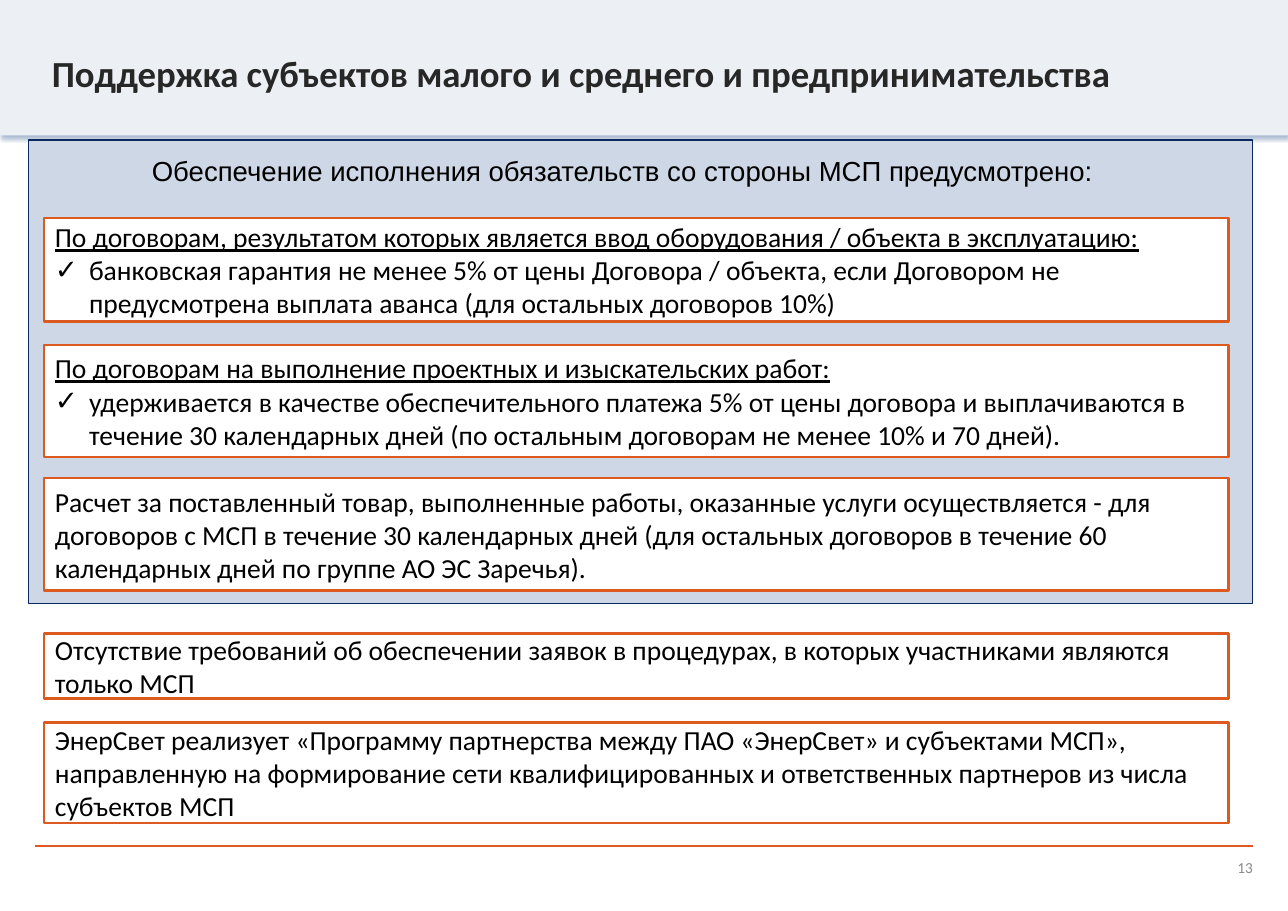
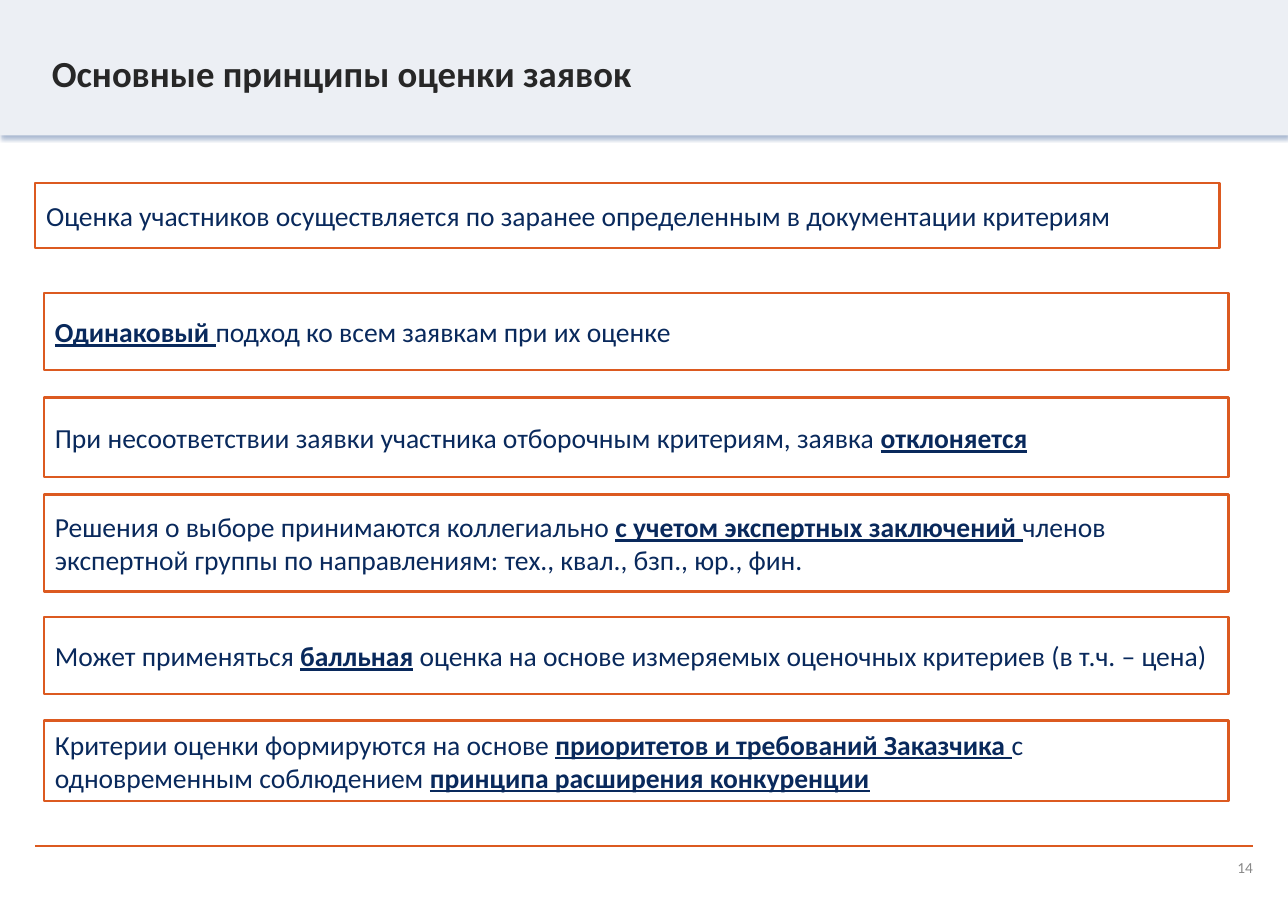
"""Build two slides on support for small businesses and on bid evaluation."""
from lxml.etree import SubElement
from pptx import Presentation
from pptx.dml.color import RGBColor
from pptx.enum.shapes import MSO_CONNECTOR, MSO_SHAPE
from pptx.enum.text import MSO_ANCHOR, PP_ALIGN
from pptx.oxml.ns import qn
from pptx.util import Inches, Pt

THEME = {
    "colours": {"accent": "DC5A20", "band": "ECEFF4", "shadow": "0C377B", "panel": "CED7E5",
                "navy": "09295C", "title": "272727", "number": "898989", "black": "000000",
                "white": "FFFFFF"},
    "title": {"name": "Calibri", "size": Pt(24), "bold": True},
    "body": {"name": "Calibri", "size": Pt(18)},
    "heading": {"name": "Arial", "size": Pt(18)},
    "number": {"name": "Calibri", "size": Pt(10)},
}
EMPHASIS = {
    "plain": {"bold": False, "underline": False},
    "under": {"bold": False, "underline": True},
    "strong": {"bold": True, "underline": True},
}
PAGE_WIDTH, PAGE_HEIGHT = 11.69, 8.27
CARD_LEFT, CARD_WIDTH = 0.4, 10.75
BULLET_INDENT = 0.31
PANEL = (0.26, 1.27, 11.11, 4.21)
HEADING = (1.28, 1.35, 9.35, 0.4)

SLIDES = [
    {
        "title": "Поддержка субъектов малого и среднего и предпринимательства",
        "number": "13",
        "heading": "Обеспечение исполнения обязательств со стороны МСП предусмотрено:",
        "colour": "black",
        "cards": [
            {"top": 1.98, "height": 0.94, "text": [
                [("По договорам, результатом которых является ввод оборудования / объекта "
                  "в эксплуатацию:", "under")]],
             "bullet": "банковская гарантия не менее 5% от цены Договора / объекта, если "
                       "Договором не предусмотрена выплата аванса (для остальных договоров 10%)"},
            {"top": 3.13, "height": 1.02, "text": [
                [("По договорам на выполнение проектных и изыскательских работ:", "under")]],
             "bullet": "удерживается в качестве обеспечительного платежа 5% от цены договора и "
                       "выплачиваются в течение 30 календарных дней (по остальным договорам "
                       "не менее 10% и 70 дней)."},
            {"top": 4.34, "height": 1.02, "text": [
                [("Расчет за поставленный товар, выполненные работы, оказанные услуги "
                  "осуществляется - для договоров с МСП в течение 30 календарных дней (для "
                  "остальных договоров в течение 60 календарных дней по группе АО ЭС Заречья).",
                  "plain")]]},
            {"top": 5.75, "height": 0.59, "text": [
                [("Отсутствие требований об обеспечении заявок в процедурах, в которых "
                  "участниками являются только МСП", "plain")]]},
            {"top": 6.56, "height": 0.91, "text": [
                [("ЭнерСвет реализует «Программу партнерства между ПАО «ЭнерСвет» и субъектами "
                  "МСП», направленную на формирование сети квалифицированных и ответственных "
                  "партнеров из числа субъектов МСП", "plain")]]},
        ],
    },
    {
        "title": "Основные принципы оценки заявок",
        "number": "14",
        "colour": "navy",
        "cards": [
            {"left": 0.32, "top": 1.66, "height": 0.59, "text": [
                [("Оценка участников осуществляется по заранее определенным в документации "
                  "критериям", "plain")]]},
            {"top": 2.66, "height": 0.7, "text": [
                [("Одинаковый ", "strong"), ("подход ко всем заявкам при их оценке", "plain")]]},
            {"top": 3.61, "height": 0.72, "text": [
                [("При несоответствии заявки участника отборочным критериям, заявка ", "plain"),
                 ("отклоняется", "strong")]]},
            {"top": 4.49, "height": 0.88, "text": [
                [("Решения о выборе принимаются коллегиально ", "plain"),
                 ("с учетом экспертных заключений ", "strong"),
                 ("членов экспертной группы по направлениям: тех., квал., бзп., юр., фин.",
                  "plain")]]},
            {"top": 5.6, "height": 0.7, "text": [
                [("Может применяться ", "plain"), ("балльная", "strong"),
                 (" оценка на основе измеряемых оценочных критериев (в т.ч. – цена)", "plain")]]},
            {"top": 6.54, "height": 0.73, "text": [
                [("Критерии оценки формируются на основе ", "plain"),
                 ("приоритетов и требований Заказчика ", "strong"),
                 ("с одновременным соблюдением ", "plain"),
                 ("принципа расширения конкуренции", "strong")]]},
        ],
    },
]


def colour(name):
    return RGBColor.from_string(THEME["colours"][name])


def apply_values(target, values):
    for name, value in values.items():
        setattr(target, name, value)


def add_span(para, text, style, colour_name, emphasis=None):
    span = para.add_run()
    span.text = text
    apply_values(span.font, {**THEME[style], **(emphasis or {})})
    span.font.color.rgb = colour(colour_name)


def add_rectangle(page, place, fill, line=None, width=1.0):
    box = page.shapes.add_shape(MSO_SHAPE.RECTANGLE, *map(Inches, place))
    box.fill.solid()
    box.fill.fore_color.rgb = colour(fill)
    if line:
        box.line.color.rgb = colour(line)
        box.line.width = Pt(width)
    else:
        box.line.fill.background()
    box.shadow.inherit = False
    return box


def add_label(page, place, text, style, colour_name, align=PP_ALIGN.LEFT, **frame_values):
    box = page.shapes.add_textbox(*map(Inches, place))
    apply_values(box.text_frame, {"word_wrap": True, **frame_values})
    para = box.text_frame.paragraphs[0]
    para.alignment = align
    add_span(para, text, style, colour_name)


def add_band(page):
    band = add_rectangle(page, (0, 0, PAGE_WIDTH, 1.23), "band")
    effects = band._element.spPr.find(qn("a:effectLst"))
    shadow = SubElement(effects, qn("a:outerShdw"), blurRad=str(Pt(3.1)), dist=str(Pt(1.8)),
                        dir="5400000", algn="t", rotWithShape="0")
    tint = SubElement(shadow, qn("a:srgbClr"), val=THEME["colours"]["shadow"])
    SubElement(tint, qn("a:alpha"), val="35000")


def add_footer_line(page):
    rule = page.shapes.add_connector(MSO_CONNECTOR.STRAIGHT, *map(Inches, (0.32, 7.68, 11.37, 7.68)))
    rule.line.color.rgb = colour("accent")
    rule.line.width = Pt(1.5)
    SubElement(rule._element.spPr, qn("a:effectLst"))


def add_frame(page, title, number):
    add_footer_line(page)
    add_band(page)
    add_label(page, (0.47, 0.42, 10.75, 0.81), title, "title", "title",
              margin_left=0, margin_top=Inches(0.04), margin_right=0, margin_bottom=0)
    add_label(page, (8.64, 7.79, 2.73, 0.17), number, "number", "number", PP_ALIGN.RIGHT,
              margin_left=0, margin_top=0, margin_right=0, margin_bottom=0,
              vertical_anchor=MSO_ANCHOR.MIDDLE)


def add_check_mark(para):
    properties = para._p.get_or_add_pPr()
    properties.set("marL", str(Inches(BULLET_INDENT)))
    properties.set("indent", str(-Inches(BULLET_INDENT)))
    SubElement(properties, qn("a:buFont"), typeface="Arial")
    SubElement(properties, qn("a:buChar"), char="✓")


def add_card(page, card, colour_name):
    place = (card.get("left", CARD_LEFT), card["top"], CARD_WIDTH, card["height"])
    box = add_rectangle(page, place, "white", "accent", 1.5)
    frame = box.text_frame
    apply_values(frame, {"word_wrap": True, "vertical_anchor": MSO_ANCHOR.MIDDLE})
    lines = [(spans, False) for spans in card["text"]]
    if "bullet" in card:
        lines.append(([(card["bullet"], "plain")], True))
    for index, (spans, bulleted) in enumerate(lines):
        para = frame.add_paragraph() if index else frame.paragraphs[0]
        para.alignment = PP_ALIGN.LEFT
        if bulleted:
            add_check_mark(para)
        for text, emphasis in spans:
            add_span(para, text, "body", colour_name, EMPHASIS[emphasis])


def main():
    deck = Presentation()
    deck.slide_width, deck.slide_height = Inches(PAGE_WIDTH), Inches(PAGE_HEIGHT)
    for content in SLIDES:
        page = deck.slides.add_slide(deck.slide_layouts[6])
        add_frame(page, content["title"], content["number"])
        if "heading" in content:
            add_rectangle(page, PANEL, "panel", "navy")
            add_label(page, HEADING, content["heading"], "heading", "black")
        for card in content["cards"]:
            add_card(page, card, content["colour"])
    deck.save("out.pptx")


if __name__ == "__main__":
    main()
